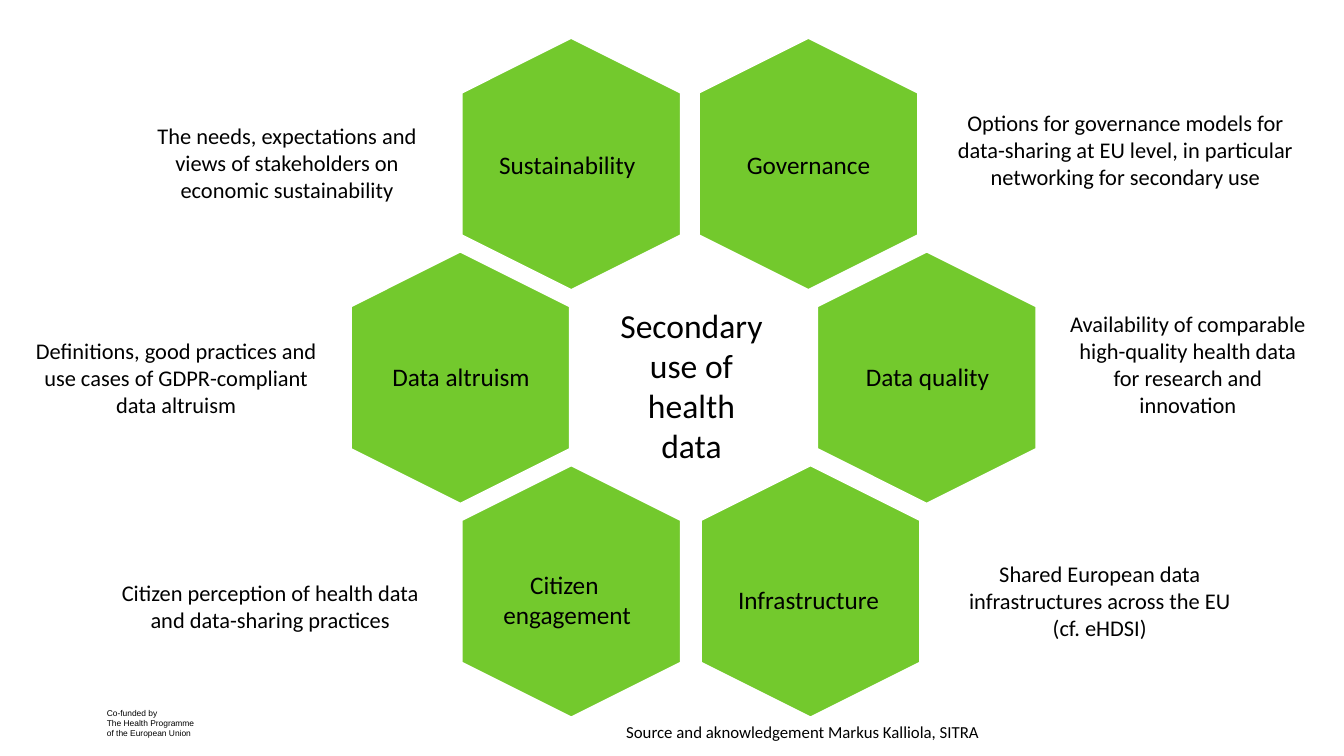
"""Builds a slide with six themes around the secondary use of health data."""
from typing import NamedTuple

from pptx import Presentation
from pptx.dml.color import RGBColor
from pptx.enum.shapes import MSO_SHAPE
from pptx.enum.text import MSO_ANCHOR, MSO_AUTO_SIZE, PP_ALIGN
from pptx.util import Inches, Pt

GREEN = RGBColor(0x73, 0xC9, 0x2D)
WHITE = RGBColor(0xFF, 0xFF, 0xFF)
BLACK = RGBColor(0, 0, 0)

SLIDE_WIDTH, SLIDE_HEIGHT = 20, 11.25
HEXAGON_LENGTH, HEXAGON_BREADTH = 3.75, 3.26
FIRST_ROW, ROW_PITCH = 2.44, 3.18
LABEL_ROWS = (2.44, 5.6, 8.92)
LABEL_LINE, DESCRIPTION_LINE = 0.45, 0.4


class Theme(NamedTuple):
    label: str
    row: int
    center: float
    label_center: float
    label_width: float
    description: str
    left: float
    top: float
    width: float
    lines: int


THEMES = (
    Theme("Governance", 0, 12.03, 12.03, 1.85,
          "Options for governance models for data-sharing at EU level, "
          "in particular networking for secondary use", 14.15, 1.62, 5.19, 3),
    Theme("Sustainability", 0, 8.5, 8.44, 2.04,
          "The needs, expectations and views of stakeholders on "
          "economic sustainability", 1.98, 1.82, 4.58, 3),
    Theme("Infrastructure", 2, 12.06, 12.03, 2.11,
          "Shared European data infrastructures across the EU (cf. eHDSI)",
          14.33, 8.34, 4.07, 3),
    Theme("Data quality", 1, 13.79, 13.8, 1.85,
          "Availability of comparable high-quality health data for "
          "research and innovation", 15.92, 4.62, 3.51, 4),
    Theme("Data altruism", 1, 6.85, 6.86, 2.06,
          "Definitions, good practices and use cases of GDPR-compliant "
          "data altruism", 0.33, 5.02, 4.58, 3),
    Theme("Citizen \nengagement", 2, 8.5, 8.44, 1.91,
          "Citizen perception of health data and data-sharing practices",
          1.73, 8.62, 4.58, 2),
)


def place(box, left, top, width, height):
    """Move and size a box, in inches."""
    box.left, box.top = Inches(left), Inches(top)
    box.width, box.height = Inches(width), Inches(height)


def write(box, text, size, align=PP_ALIGN.CENTER, font="Calibri", wrap=True, inset=True):
    """Fill a box with text in one format."""
    frame = box.text_frame
    frame.word_wrap = wrap
    frame.auto_size = MSO_AUTO_SIZE.SHAPE_TO_FIT_TEXT
    frame.vertical_anchor = MSO_ANCHOR.TOP
    if not inset:
        frame.margin_left = frame.margin_right = 0
        frame.margin_top = frame.margin_bottom = 0
    frame.text = text
    for paragraph in frame.paragraphs:
        paragraph.alignment = align
        paragraph.font.name = font
        paragraph.font.size = Pt(size)
        paragraph.font.color.rgb = BLACK


def add_text(slide, bounds, text, size, **formatting):
    """Add a text box at the given bounds."""
    box = slide.shapes.add_textbox(*map(Inches, bounds))
    write(box, text, size, **formatting)


def add_hexagon(slide, theme):
    """Add the upright hexagon of a theme."""
    middle = FIRST_ROW + theme.row * ROW_PITCH
    hexagon = slide.shapes.add_shape(
        MSO_SHAPE.HEXAGON,
        Inches(theme.center - HEXAGON_LENGTH / 2), Inches(middle - HEXAGON_BREADTH / 2),
        Inches(HEXAGON_LENGTH), Inches(HEXAGON_BREADTH))
    hexagon.rotation = 90
    hexagon.shadow.inherit = False
    hexagon.fill.solid()
    hexagon.fill.fore_color.rgb = GREEN
    hexagon.line.color.rgb = WHITE
    hexagon.line.width = Pt(2)


def add_label(slide, theme):
    """Name a theme inside its hexagon."""
    height = LABEL_LINE * (theme.label.count("\n") + 1)
    bounds = (theme.label_center - theme.label_width / 2,
              LABEL_ROWS[theme.row] - height / 2, theme.label_width, height)
    add_text(slide, bounds, theme.label, 27, wrap=False, inset=False)


def add_description(slide, theme):
    """Explain a theme beside its hexagon."""
    bounds = (theme.left, theme.top, theme.width, theme.lines * DESCRIPTION_LINE)
    add_text(slide, bounds, theme.description, 24, inset=False)


def main():
    """Build and save the slide."""
    deck = Presentation()
    deck.slide_width, deck.slide_height = Inches(SLIDE_WIDTH), Inches(SLIDE_HEIGHT)
    slide = deck.slides.add_slide(deck.slide_layouts[5])

    title = slide.shapes.title
    place(title, 9.22, 4.53, 2.14, 2.42)
    write(title, "Secondary\vuse of\vhealth\vdata", 36, wrap=False, inset=False)

    add_text(slide, (1.59, 10.53, 1.45, 0.45),
             "Co-funded by\nThe Health Programme\nof the European Union", 9,
             align=PP_ALIGN.LEFT, font="Arial", inset=False)
    for add_part in (add_hexagon, add_label, add_description):
        for theme in THEMES:
            add_part(slide, theme)
    add_text(slide, (9.22, 10.69, 5.57, 0.4),
             "Source and aknowledgement Markus Kalliola, SITRA", 18,
             align=PP_ALIGN.LEFT, wrap=False)
    deck.save("out.pptx")


if __name__ == "__main__":
    main()
